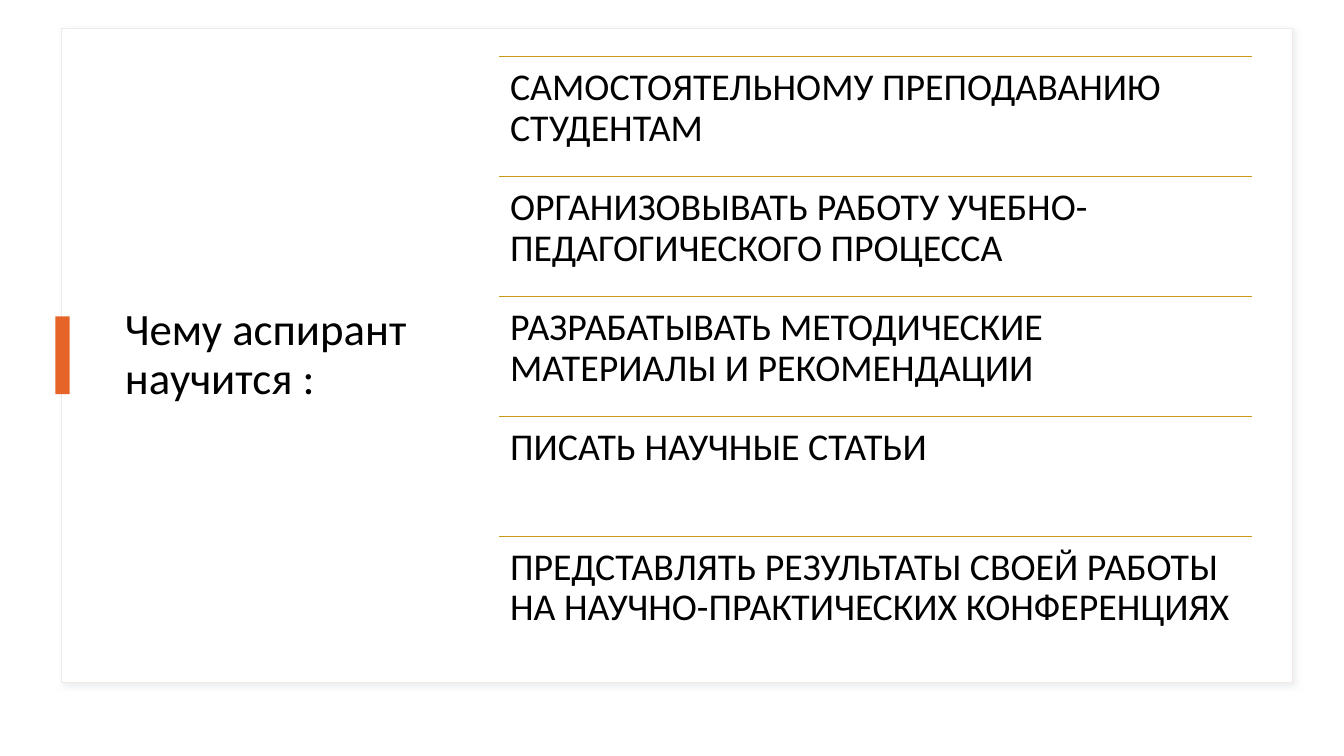
from pptx import Presentation
from pptx.util import Inches, Pt
from pptx.dml.color import RGBColor
from pptx.enum.shapes import MSO_SHAPE, MSO_CONNECTOR
from pptx.enum.text import MSO_ANCHOR
from pptx.oxml import parse_xml
from pptx.oxml.ns import nsdecls, qn
from lxml import etree


def color(code):
    return RGBColor.from_string(code)


def write(box, text, size, inset):
    frame = box.text_frame
    frame.word_wrap = True
    frame.margin_left = frame.margin_right = Inches(inset)
    para = frame.paragraphs[0]
    para.text = text
    para.line_spacing = 0.9
    para.font.size = Pt(size)
    para.font.name = "Calibri"
    para.font.color.rgb = color("000000")
    return frame


deck = Presentation()
deck.slide_width, deck.slide_height = Inches(13.33), Inches(7.5)
slide = deck.slides.add_slide(deck.slide_layouts[6])
shapes = slide.shapes
slide.background.fill.solid()
slide.background.fill.fore_color.rgb = color("FFFFFF")

# Card with a soft shadow
card = shapes.add_shape(MSO_SHAPE.RECTANGLE, Inches(0.61), Inches(0.28), Inches(12.21), Inches(6.49))
card.fill.solid()
card.fill.fore_color.rgb = color("FFFFFF")
card.line.color.rgb = color("F0E9E5")
card.line.width = Pt(1)
card._element.spPr.append(parse_xml(
    f'<a:effectLst {nsdecls("a")}>'
    '<a:outerShdw blurRad="50800" dist="38100" dir="2700000" algn="tl" rotWithShape="0">'
    '<a:srgbClr val="BCC5CA"><a:alpha val="30000"/></a:srgbClr>'
    '</a:outerShdw></a:effectLst>'))

# Title
title = shapes.add_textbox(Inches(1.14), Inches(0.55), Inches(3.27), Inches(5.95))
frame = write(title, "Чему аспирант научится :", 32, 0.1)
frame.vertical_anchor = MSO_ANCHOR.MIDDLE

# Accent bar
bar = shapes.add_shape(MSO_SHAPE.RECTANGLE, Inches(0.55), Inches(3.14), Inches(0.14), Inches(0.77))
bar.fill.solid()
bar.fill.fore_color.rgb = color("E76429")
bar.line.fill.background()
bar.shadow.inherit = False

# Skills, each under its own rule
skills = [
    "САМОСТОЯТЕЛЬНОМУ ПРЕПОДАВАНИЮ СТУДЕНТАМ",
    "ОРГАНИЗОВЫВАТЬ РАБОТУ УЧЕБНО-ПЕДАГОГИЧЕСКОГО ПРОЦЕССА",
    "РАЗРАБАТЫВАТЬ МЕТОДИЧЕСКИЕ МАТЕРИАЛЫ И РЕКОМЕНДАЦИИ",
    "ПИСАТЬ НАУЧНЫЕ СТАТЬИ",
    "ПРЕДСТАВЛЯТЬ РЕЗУЛЬТАТЫ СВОЕЙ РАБОТЫ НА НАУЧНО-ПРАКТИЧЕСКИХ КОНФЕРЕНЦИЯХ",
]
left, top, width, step = 4.95, 0.56, 7.47, 1.19
for row, skill in enumerate(skills):
    y = Inches(top + row * step)
    rule = shapes.add_connector(MSO_CONNECTOR.STRAIGHT, Inches(left), y, Inches(left + width), y)
    rule.line.color.rgb = color("CB9A16")
    rule.line.width = Pt(1)
    etree.SubElement(rule._element.spPr, qn("a:effectLst"))
    box = shapes.add_textbox(Inches(left), y, Inches(width), Inches(step))
    frame = write(box, skill, 27, 0.11)
    frame.margin_top = frame.margin_bottom = Inches(0.11)

deck.save("out.pptx")
